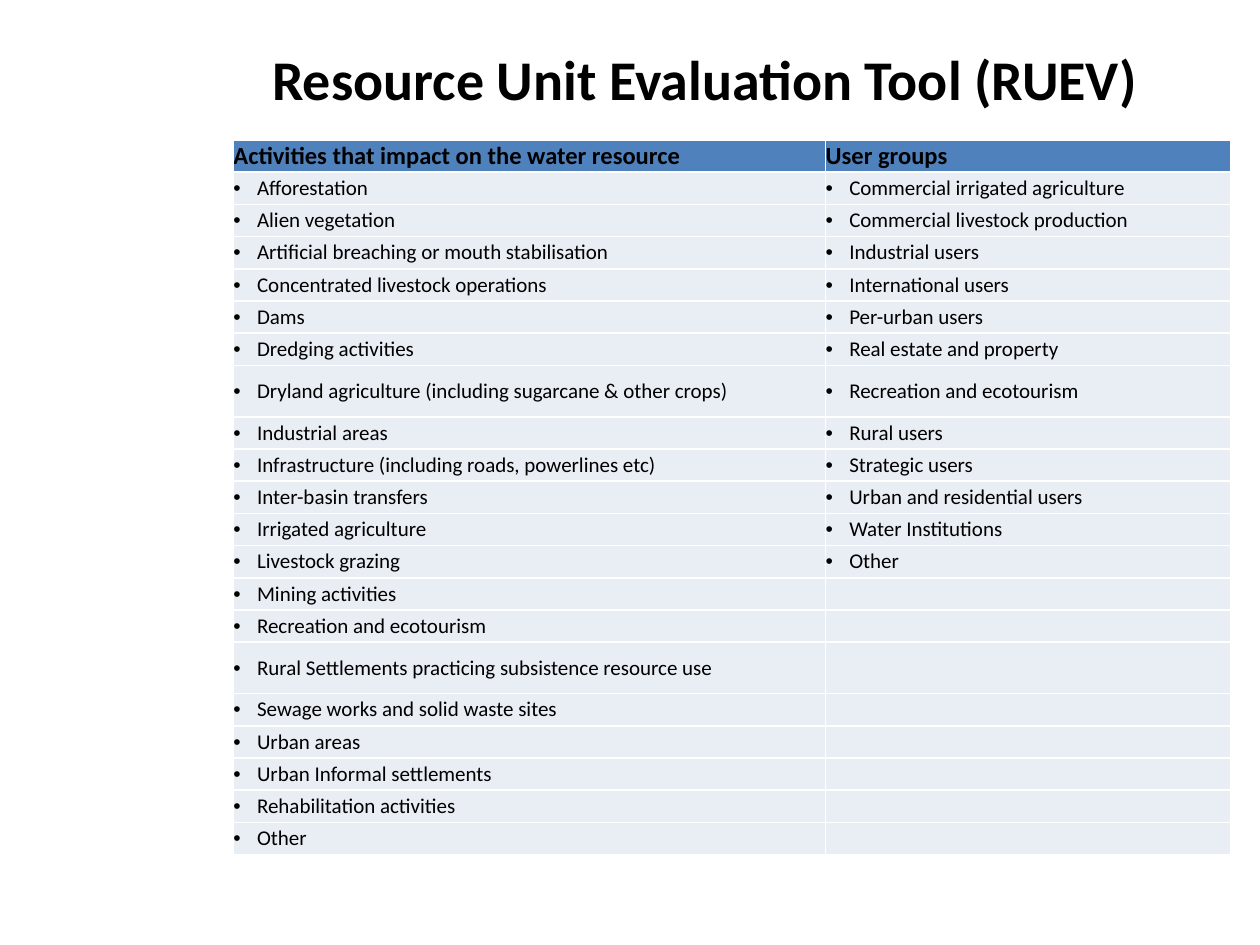
from itertools import zip_longest

from lxml.etree import SubElement
from pptx import Presentation
from pptx.dml.color import RGBColor
from pptx.enum.text import MSO_ANCHOR, PP_ALIGN
from pptx.oxml.ns import qn
from pptx.util import Pt

COLORS = {"text": "000000", "header": "4F81BD", "body": "E9EDF4", "border": "FFFFFF"}
FONT = "Calibri"
HEADERS = ("Activities that impact on the water resource", "User groups")
ACTIVITIES = [
    "Afforestation",
    "Alien vegetation",
    "Artificial breaching or mouth stabilisation",
    "Concentrated livestock operations",
    "Dams",
    "Dredging activities",
    "Dryland agriculture (including sugarcane & other crops)",
    "Industrial areas",
    "Infrastructure (including roads, powerlines etc)",
    "Inter-basin transfers",
    "Irrigated agriculture",
    "Livestock grazing",
    "Mining activities",
    "Recreation and ecotourism",
    "Rural Settlements practicing subsistence resource use",
    "Sewage works and solid waste sites",
    "Urban areas",
    "Urban Informal settlements",
    "Rehabilitation activities",
    "Other",
]
USER_GROUPS = [
    "Commercial irrigated agriculture",
    "Commercial livestock production",
    "Industrial users",
    "International users",
    "Per-urban users",
    "Real estate and property",
    "Recreation and ecotourism",
    "Rural users",
    "Strategic users",
    "Urban and residential users",
    "Water Institutions",
    "Other",
]
COL_WIDTHS = (338.4, 231.6)
ROW_HEIGHT, TALL_HEIGHT = 18.4, 29.4
TALL_ROWS = (7, 15)
INDENT = Pt(13.5)


def add_run(p, text, size, bold):
    r = p.add_run()
    r.text = text
    r.font.name = FONT
    r.font.size = Pt(size)
    r.font.bold = bold
    r.font.color.rgb = RGBColor.from_string(COLORS["text"])


def set_borders(cell):
    tcPr = cell._tc.get_or_add_tcPr()
    for side in ("a:lnL", "a:lnR", "a:lnT", "a:lnB"):
        ln = SubElement(tcPr, qn(side), w=str(Pt(1)))
        SubElement(SubElement(ln, qn("a:solidFill")), qn("a:srgbClr"), val=COLORS["border"])


prs = Presentation()
prs.slide_width, prs.slide_height = Pt(720), Pt(540)
s = prs.slides.add_slide(prs.slide_layouts[5])

# Title
title = s.shapes.title
title.left, title.top, title.width, title.height = Pt(121.7), Pt(21.6), Pt(562.3), Pt(90)
tf = title.text_frame
tf.vertical_anchor = MSO_ANCHOR.TOP
p = tf.paragraphs[0]
p.alignment = PP_ALIGN.CENTER
add_run(p, "Resource Unit Evaluation Tool (RUEV)", 32, True)

# Table grid
rows = [HEADERS, *zip_longest(ACTIVITIES, USER_GROUPS)]
heights = [TALL_HEIGHT if i in TALL_ROWS else ROW_HEIGHT for i in range(len(rows))]
table = s.shapes.add_table(len(rows), len(COL_WIDTHS), Pt(133.4), Pt(80),
                           Pt(sum(COL_WIDTHS)), Pt(sum(heights))).table
table.horz_banding = False
for col, width in zip(table.columns, COL_WIDTHS):
    col.width = Pt(width)
for row, height in zip(table.rows, heights):
    row.height = Pt(height)

# Table cells
for i, texts in enumerate(rows):
    for j, text in enumerate(texts):
        cell = table.cell(i, j)
        cell.margin_left = cell.margin_right = cell.margin_top = cell.margin_bottom = 0
        cell.vertical_anchor = MSO_ANCHOR.MIDDLE
        set_borders(cell)
        cell.fill.solid()
        cell.fill.fore_color.rgb = RGBColor.from_string(COLORS["body" if i else "header"])
        p = cell.text_frame.paragraphs[0]
        if not text:
            # Keep empty cells from stretching the row
            SubElement(p._p, qn("a:endParaRPr"), sz="1200")
        elif i == 0:
            add_run(p, text, 14, True)
        else:
            pPr = p._p.get_or_add_pPr()
            pPr.set("marL", str(INDENT))
            pPr.set("indent", str(-INDENT))
            SubElement(pPr, qn("a:buFont"), typeface="Arial")
            SubElement(pPr, qn("a:buChar"), char="•")
            add_run(p, text, 12, False)

prs.save("out.pptx")
